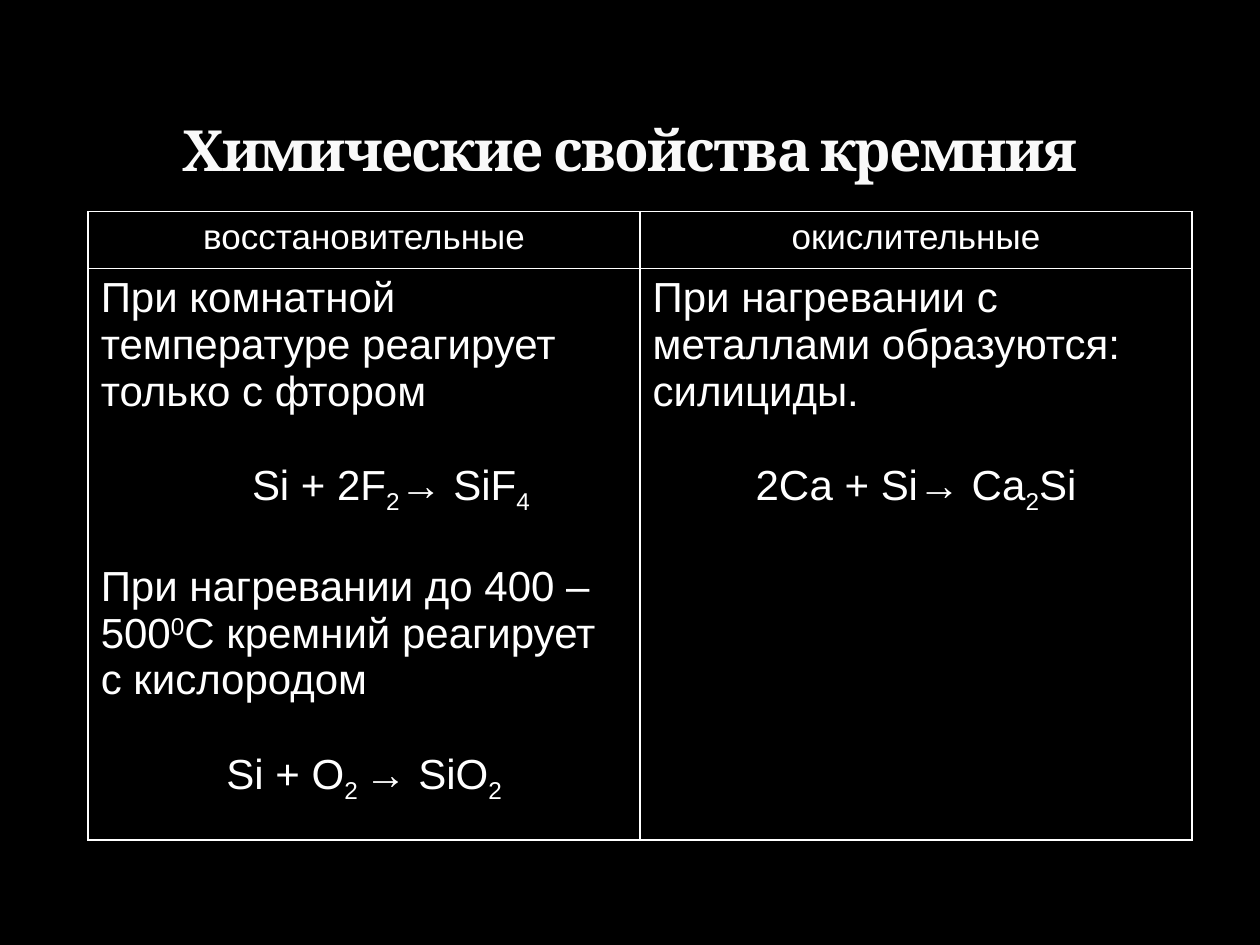
from dataclasses import dataclass

from lxml import etree
from pptx import Presentation
from pptx import util as u
from pptx.dml.color import RGBColor
from pptx.enum import text
from pptx.oxml.ns import qn


@dataclass(frozen=True)
class Theme:
    background: RGBColor = RGBColor(0x00, 0x00, 0x00)
    title_color: RGBColor = RGBColor(0xF9, 0xF9, 0xF9)
    ink: RGBColor = RGBColor(0xFF, 0xFF, 0xFF)
    title_font: str = "Cambria"
    body_font: str = "Arial"
    title_size: u.Pt = u.Pt(32.4)
    header_size: u.Pt = u.Pt(20)
    body_size: u.Pt = u.Pt(24)
    gap: u.Pt = u.Pt(27)
    border: u.Pt = u.Pt(1)


CENTER = text.PP_ALIGN.CENTER
LEFT = text.PP_ALIGN.LEFT
SUB, SUPER = -25000, 30000


class SlideBuilder:
    def __init__(self, deck, theme):
        self.theme = theme
        self.page = deck.slides.add_slide(deck.slide_layouts[6])
        fill = self.page.background.fill
        fill.solid()
        fill.fore_color.rgb = theme.background

    def span(self, para, words, color, baseline=0, spacing=0, **font):
        """Add one run; baseline and spacing are in hundredths."""
        span = para.add_run()
        span.text = words
        for name, value in font.items():
            setattr(span.font, name, value)
        span.font.color.rgb = color
        properties = span.font._element
        for name, value in {"baseline": baseline, "spc": spacing}.items():
            if value:
                properties.set(name, str(value))

    def title(self, words, left, top, width, height):
        box = self.page.shapes.add_textbox(left, top, width, height)
        frame = box.text_frame
        frame.word_wrap = True
        frame.vertical_anchor = text.MSO_ANCHOR.BOTTOM
        para = frame.paragraphs[0]
        para.alignment = CENTER
        self.span(para, words, self.theme.title_color, spacing=-100, bold=True,
                  name=self.theme.title_font, size=self.theme.title_size)

    def borders(self, cell):
        properties = cell._tc.get_or_add_tcPr()
        for side in ("lnL", "lnR", "lnT", "lnB"):
            line = etree.SubElement(properties, qn(f"a:{side}"), w=str(self.theme.border))
            solid = etree.SubElement(line, qn("a:solidFill"))
            etree.SubElement(solid, qn("a:srgbClr"), val=str(self.theme.ink))

    def cell(self, cell, paragraphs, size):
        self.borders(cell)
        cell.fill.background()
        frame = cell.text_frame
        for index, (alignment, indent, spans) in enumerate(paragraphs):
            para = frame.add_paragraph() if index else frame.paragraphs[0]
            para.alignment = alignment
            if index:
                para.space_before = self.theme.gap
            if indent:
                para._p.get_or_add_pPr().set("marL", str(indent))
            for words, baseline in spans:
                self.span(para, words, self.theme.ink, baseline,
                          name=self.theme.body_font, size=size)

    def table(self, rows, left, top, widths, heights):
        frame = self.page.shapes.add_table(
            len(heights), len(widths), left, top, sum(widths), sum(heights))
        table = frame.table
        table.first_row = table.horz_banding = False
        for column, width in zip(table.columns, widths):
            column.width = width
        sizes = (self.theme.header_size, self.theme.body_size)
        for row, height, contents, size in zip(table.rows, heights, rows, sizes):
            row.height = height
            for cell, paragraphs in zip(row.cells, contents):
                self.cell(cell, paragraphs, size)


# Cell contents: paragraphs of (alignment, indent, [(words, baseline)])
HEADERS = [[(CENTER, 0, [(words, 0)])] for words in ("восстановительные", "окислительные")]
REDUCING = [
    (LEFT, 0, [("При комнатной температуре реагирует только c фтором", 0)]),
    (LEFT, u.Inches(1.2), [("Si + 2F", 0), ("2", SUB), ("→ SiF", 0), ("4", SUB)]),
    (LEFT, 0, [("При нагревании до 400 – 500", 0), ("0", SUPER),
               ("С кремний реагирует с кислородом", 0)]),
    (CENTER, 0, [("Si + O", 0), ("2 ", SUB), ("→ SiO", 0), ("2", SUB)]),
]
OXIDISING = [
    (LEFT, 0, [("При нагревании с металлами образуются: силициды.", 0)]),
    (CENTER, 0, [("2Са + Si→ Ca", 0), ("2", SUB), ("Si", 0)]),
]


def main():
    deck = Presentation()
    deck.slide_width, deck.slide_height = u.Inches(10), u.Inches(7.5)
    builder = SlideBuilder(deck, Theme())

    # Title
    builder.title("Химические свойства кремния",
                  u.Inches(0.5), u.Inches(0.17), u.Inches(9), u.Inches(1.33))

    # Table of properties
    builder.table([HEADERS, [REDUCING, OXIDISING]], u.Inches(0.7), u.Inches(1.68),
                  [u.Inches(4.38)] * 2, [u.Inches(0.45), u.Inches(4.38)])

    deck.save("out.pptx")


if __name__ == "__main__":
    main()
